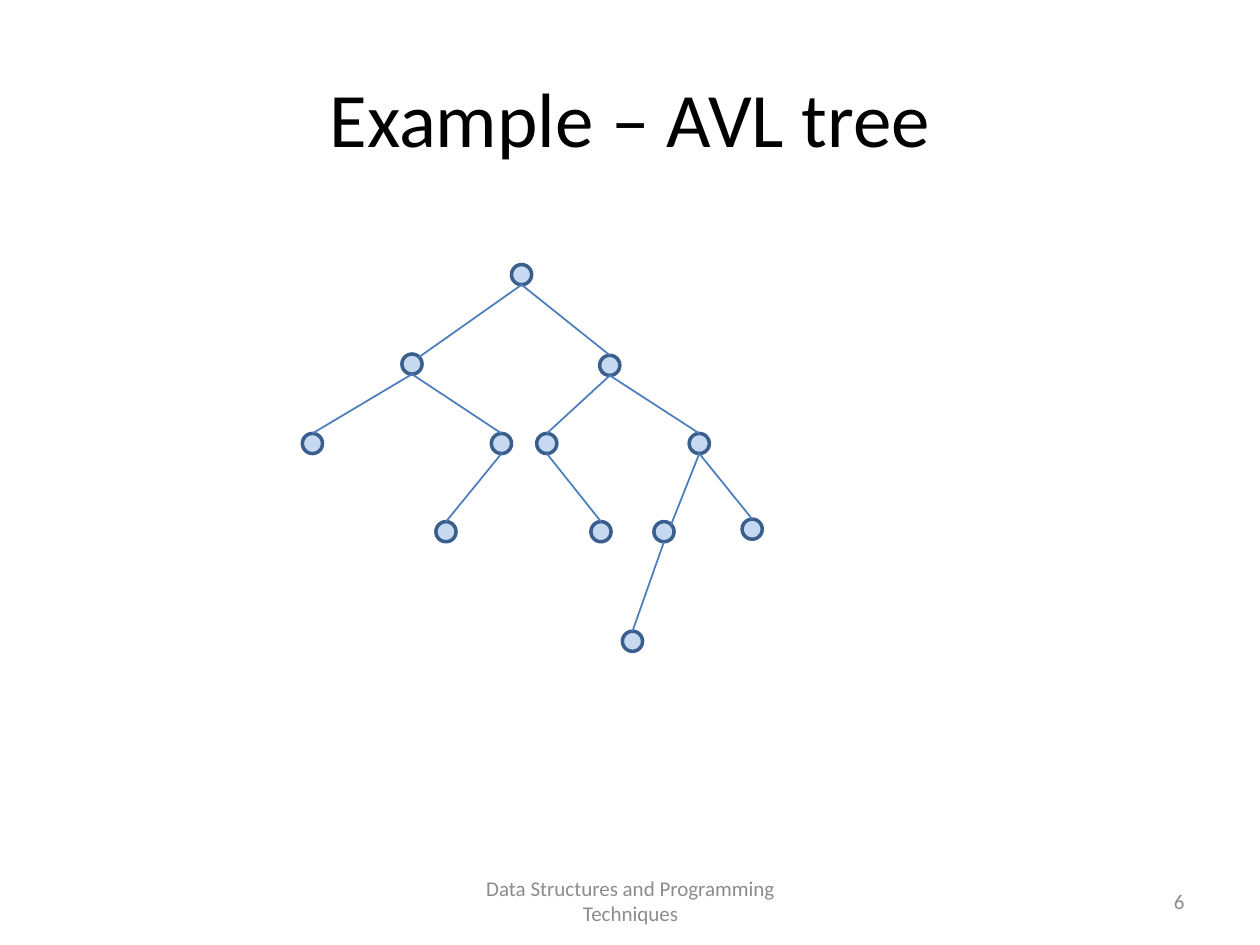
from typing import NamedTuple

from lxml.etree import SubElement
from pptx import Presentation
from pptx.dml.color import RGBColor
from pptx.enum.shapes import MSO_CONNECTOR as Link, MSO_SHAPE as Preset
from pptx.enum.text import MSO_ANCHOR as Anchor, PP_ALIGN as Align
from pptx.oxml.ns import qn
from pptx.util import Inches, Pt

SIZE = 0.16
DIAG = 0.85  # share of the box at which a circle meets its diagonal


class Node(NamedTuple):
    left: float
    top: float
    parent: str = ""
    corner: bool = False  # edge arrives at the upper right, not the top


class Note(NamedTuple):
    text: str
    left: float
    width: float
    align: Align


TREE = {
    "root": Node(4.06, 2.1),
    "L": Node(3.19, 2.81, "root", True),
    "R": Node(4.76, 2.82, "root"),
    "LL": Node(2.4, 3.44, "L"),
    "LR": Node(3.9, 3.44, "L"),
    "RL": Node(4.26, 3.44, "R"),
    "RR": Node(5.47, 3.44, "R"),
    "LRL": Node(3.46, 4.14, "LR"),
    "RLR": Node(4.69, 4.14, "RL"),
    "RRL": Node(5.19, 4.14, "RR", True),
    "RRR": Node(5.89, 4.12, "RR"),
    "RRLL": Node(4.94, 5.01, "RRL"),
}

NOTES = [
    Note("Data Structures and Programming Techniques", 3.42, 3.17, Align.CENTER),
    Note("6", 7.17, 2.33, Align.RIGHT),
]


def tint(hue: str) -> RGBColor:
    return RGBColor.from_string(hue)


def write(shape, text: str, size: int, hue: str, align: Align) -> None:
    frame = shape.text_frame
    frame.text = text
    frame.word_wrap = True
    frame.vertical_anchor = Anchor.MIDDLE
    para = frame.paragraphs[0]
    para.alignment = align
    for name, value in {"name": "Calibri", "size": Pt(size)}.items():
        setattr(para.font, name, value)
    para.font.color.rgb = tint(hue)


def draw_node(shapes, node: Node):
    dot = shapes.add_shape(Preset.OVAL, Inches(node.left), Inches(node.top),
                           Inches(SIZE), Inches(SIZE))
    dot.shadow.inherit = False
    dot.fill.solid()
    dot.fill.fore_color.rgb = tint("C6D9F1")
    dot.line.color.rgb = tint("3A5F8C")
    dot.line.width = Pt(2)
    return dot


def draw_edge(shapes, start: Node, end: Node, dot) -> None:
    """Run from the bottom of the parent to the top of the child."""
    across, down = (DIAG, 1 - DIAG) if end.corner else (0.5, 0)
    line = shapes.add_connector(
        Link.STRAIGHT,
        Inches(start.left + SIZE / 2), Inches(start.top + SIZE),
        Inches(end.left + SIZE * across), Inches(end.top + SIZE * down))
    if not end.corner:
        line.end_connect(dot, 0)
    line.line.color.rgb = tint("4B7EBC")
    line.line.width = Pt(1)
    SubElement(line._element.spPr, qn("a:effectLst"))


def main() -> None:
    deck = Presentation()
    deck.slide_width, deck.slide_height = Inches(10), Inches(7.5)
    slide = deck.slides.add_slide(deck.slide_layouts[5])
    shapes = slide.shapes

    title = shapes.title
    box = {"left": 0.5, "top": 0.3, "width": 9, "height": 1.25}
    for side, value in box.items():
        setattr(title, side, Inches(value))
    write(title, "Example – AVL tree", 44, "000000", Align.CENTER)

    for node in TREE.values():
        dot = draw_node(shapes, node)
        if node.parent:
            draw_edge(shapes, TREE[node.parent], node, dot)

    for note in NOTES:
        label = shapes.add_textbox(Inches(note.left), Inches(6.95),
                                   Inches(note.width), Inches(0.4))
        write(label, note.text, 12, "8C8C8C", note.align)

    deck.save("out.pptx")


if __name__ == "__main__":
    main()
